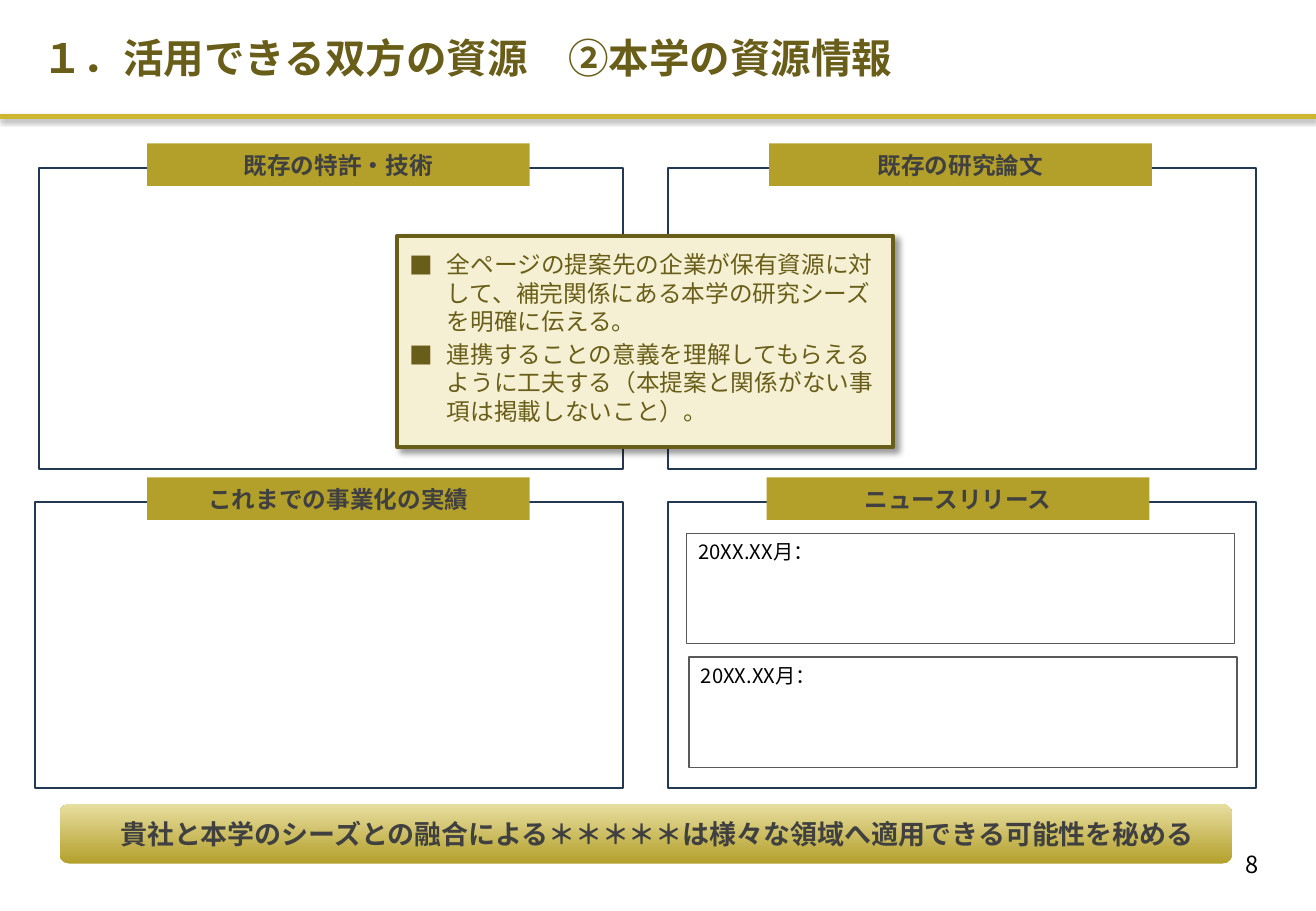
from collections import namedtuple
from dataclasses import dataclass

from pptx import Presentation
from pptx.dml.color import RGBColor
from pptx.enum.shapes import MSO_CONNECTOR as Connector, MSO_SHAPE as Preset
from pptx.enum.text import MSO_ANCHOR as Anchor, PP_ALIGN as Align
from pptx.oxml.ns import qn
from pptx.util import Inches, Pt
from lxml.etree import SubElement

Box = namedtuple("Box", "left top width height")


@dataclass(frozen=True)
class Theme:
    font: str = "Noto Sans CJK JP"
    olive: str = "695E19"
    gold: str = "B3A02B"
    rule: str = "CDB731"
    pale: str = "E8DEA0"
    cream: str = "F5F0D3"
    navy: str = "233953"
    grey: str = "595959"
    heading: str = "404040"
    black: str = "000000"
    title_size: int = 24
    message_size: int = 16
    body_size: int = 14
    news_size: int = 12


THEME = Theme()
WIDTH, HEIGHT = 10.83, 7.5
COLUMNS, ROWS = (0.29, 5.5), (1.38, 4.13)
PANEL_WIDTH, PANEL_HEIGHTS = 4.84, (2.48, 2.36)
TAB_WIDTH, TAB_HEIGHT, TAB_RISE = 3.15, 0.35, 0.2


def colour(code):
    return RGBColor.from_string(code)


def inside(box, left, top, width, height):
    """Place a box by offsets from the corner of another."""
    return Box(box.left + left, box.top + top, width, height)


def cast_shadow(item, alpha=None, blur=0, distance=0, angle=0):
    """Give an item an empty effect list, or a drop shadow when alpha is set."""
    effects = SubElement(item._element.spPr, qn("a:effectLst"))
    if alpha:
        outer = SubElement(effects, qn("a:outerShdw"), blurRad=str(Pt(blur)),
                           dist=str(Pt(distance)), dir=str(angle * 60000), rotWithShape="0")
        black = SubElement(outer, qn("a:srgbClr"), val=THEME.black)
        SubElement(black, qn("a:alpha"), val=str(alpha * 1000))


def add_box(page, box, fill=None, line=None, weight=1.0, preset=Preset.RECTANGLE):
    shape = page.shapes.add_shape(preset, *map(Inches, box))
    shape.shadow.inherit = False
    if fill:
        shape.fill.solid()
        shape.fill.fore_color.rgb = colour(fill)
    else:
        shape.fill.background()
    if line:
        shape.line.color.rgb = colour(line)
        shape.line.width = Pt(weight)
    else:
        shape.line.fill.background()
    return shape


def write(shape, lines, size, ink, bold=False, align=Align.LEFT,
          anchor=Anchor.MIDDLE, margins=(0.1, 0.05)):
    frame = shape.text_frame
    side, edge = map(Inches, margins)
    settings = {"word_wrap": True, "vertical_anchor": anchor, "margin_left": side,
                "margin_right": side, "margin_top": edge, "margin_bottom": edge}
    for name, value in settings.items():
        setattr(frame, name, value)
    for index, line in enumerate(lines):
        para = frame.add_paragraph() if index else frame.paragraphs[0]
        para.alignment = align
        if anchor == Anchor.TOP:
            para.line_spacing = Pt(round(size * 1.2, 1))
        span = para.add_run()
        span.text = line
        span.font.color.rgb = colour(ink)
        for name, value in {"name": THEME.font, "size": Pt(size), "bold": bold}.items():
            setattr(span.font, name, value)
        SubElement(span._r.get_or_add_rPr(), qn("a:ea"), typeface=THEME.font)
    return frame


def add_header(page, box, title):
    label = page.shapes.add_textbox(*map(Inches, inside(box, 0.25, 0, box.width - 0.5, 0.94)))
    write(label, [title], THEME.title_size, THEME.olive, bold=True)
    base = Inches(box.top + box.height)
    rule = page.shapes.add_connector(Connector.STRAIGHT, 0, base, Inches(box.width), base)
    rule.line.color.rgb = colour(THEME.rule)
    rule.line.width = Pt(3)
    cast_shadow(rule, alpha=38, blur=3.1, distance=1.6, angle=90)


def add_panel(page, box, heading, tab_offset):
    add_box(page, box, line=THEME.navy, weight=1.25)
    tab = add_box(page, inside(box, tab_offset, -TAB_RISE, TAB_WIDTH, TAB_HEIGHT), THEME.gold)
    write(tab, [heading], THEME.body_size, THEME.heading, bold=True, align=Align.CENTER)


def add_news(page, box, entries):
    for row, entry in enumerate(entries):
        place = inside(box, 0.15 + 0.02 * row, 0.26 + 1.02 * row, 4.51, 0.91)
        item = add_box(page, place, line=THEME.grey, weight=0.75)
        write(item, [entry], THEME.news_size, THEME.black, anchor=Anchor.TOP)


def add_note(page, box, points):
    note = add_box(page, box, THEME.cream, THEME.olive, 2.5)
    note._element.spPr.remove(note._element.spPr.find(qn("a:effectLst")))
    cast_shadow(note, alpha=40, blur=4, distance=3, angle=45)
    frame = write(note, points, THEME.body_size, THEME.olive,
                  anchor=Anchor.TOP, margins=(0.1, 0.12))
    indent = Inches(0.31)
    for para in frame.paragraphs:
        para.space_before = Pt(2.8)
        props = para._p.get_or_add_pPr()
        props.set("marL", str(indent))
        props.set("indent", str(-indent))
        SubElement(props, qn("a:buFont"), typeface=THEME.font)
        SubElement(props, qn("a:buChar"), char="■")


def add_message(page, box, message):
    bar = add_box(page, box, THEME.gold, preset=Preset.ROUNDED_RECTANGLE)
    bar.adjustments[0] = 0.167
    bar.fill.gradient()
    bar.fill.gradient_angle = 90
    for stop, code in zip(bar.fill.gradient_stops, (THEME.gold, THEME.pale)):
        stop.color.rgb = colour(code)
    frame = write(bar, [message], THEME.message_size, THEME.heading, True, Align.CENTER)
    frame.margin_left = Inches(0.29)


def add_page_number(page, box, number):
    label = page.shapes.add_textbox(*map(Inches, box))
    write(label, [number], THEME.body_size, THEME.black, align=Align.CENTER, anchor=Anchor.TOP)


def main():
    deck = Presentation()
    deck.slide_width, deck.slide_height = Inches(WIDTH), Inches(HEIGHT)
    page = deck.slides.add_slide(deck.slide_layouts[6])
    add_header(page, Box(0, 0, WIDTH, 0.96), "１．活用できる双方の資源　②本学の資源情報")
    panels = (("既存の特許・技術", 0.92), ("既存の研究論文", 0.83),
              ("これまでの事業化の実績", 0.92), ("ニュースリリース", 0.81))
    for index, (heading, tab_offset) in enumerate(panels):
        row, column = divmod(index, 2)
        box = Box(COLUMNS[column], ROWS[row], PANEL_WIDTH, PANEL_HEIGHTS[row])
        if index == 0:
            box = box._replace(left=0.32, width=4.81)
            tab_offset -= 0.03
        add_panel(page, box, heading, tab_offset)
    add_news(page, box, ["20XX.XX月："] * 2)
    add_note(page, Box(3.27, 1.94, 4.08, 1.74), [
        "全ページの提案先の企業が保有資源に対して、補完関係にある本学の研究シーズを明確に伝える。",
        "連携することの意義を理解してもらえるように工夫する（本提案と関係がない事項は掲載しないこと）。"])
    add_message(page, Box(0.49, 6.62, 9.65, 0.49),
                "貴社と本学のシーズとの融合による＊＊＊＊＊は様々な領域へ適用できる可能性を秘める")
    add_page_number(page, Box(9.87, 6.95, 0.86, 0.4), "8")
    deck.save("out.pptx")


if __name__ == "__main__":
    main()
